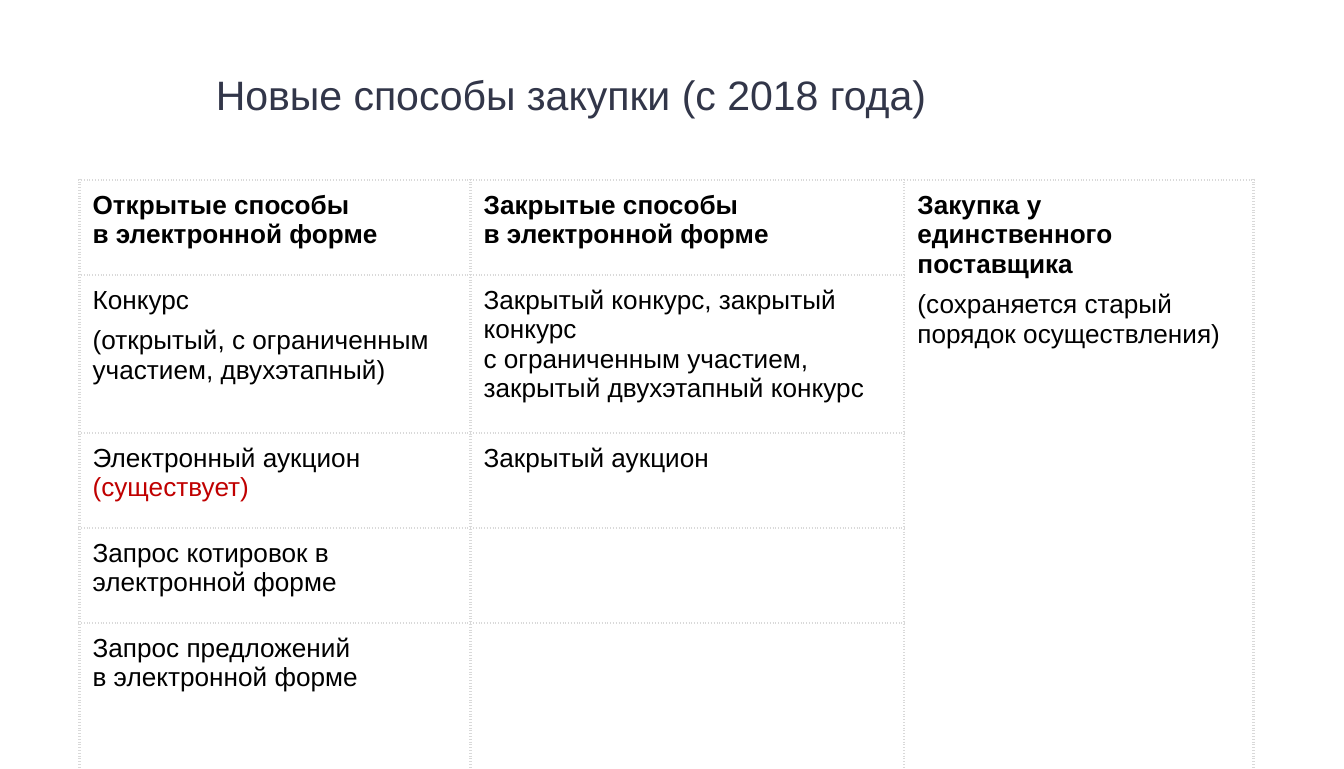
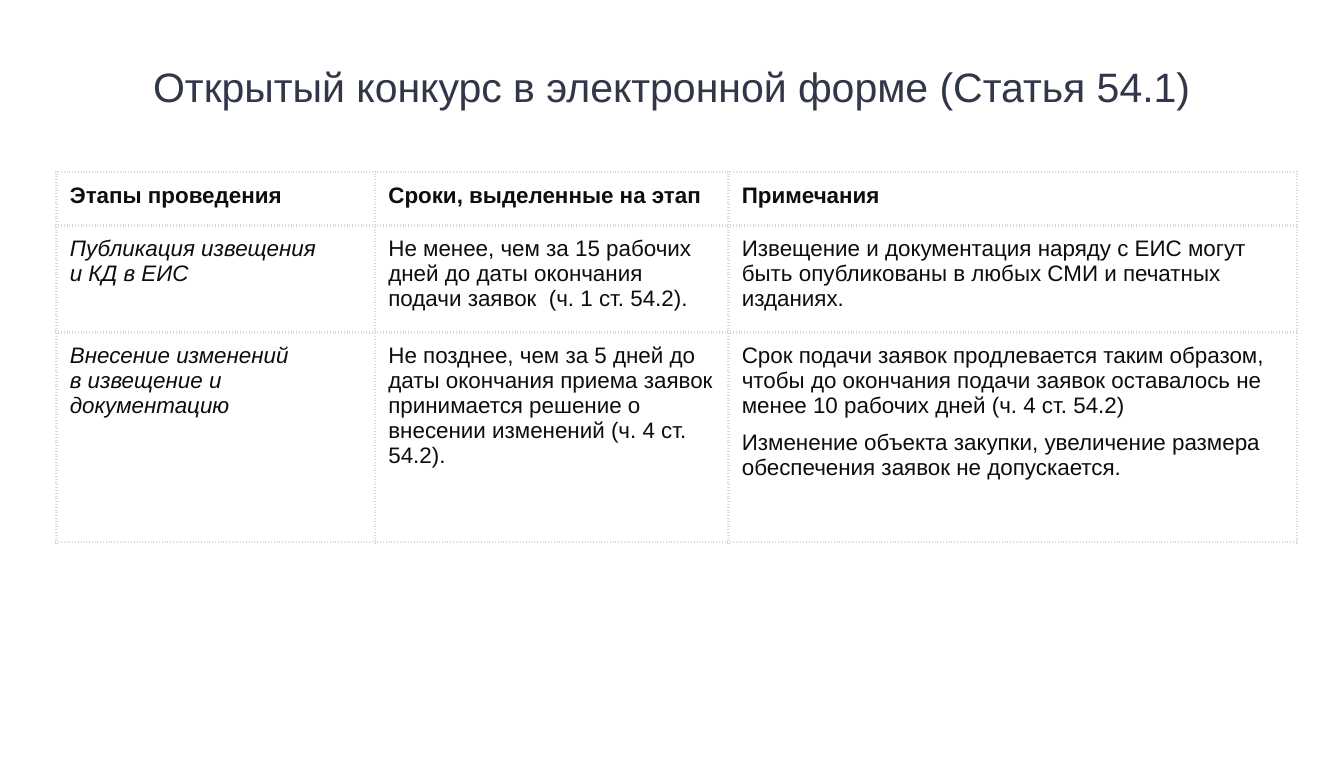
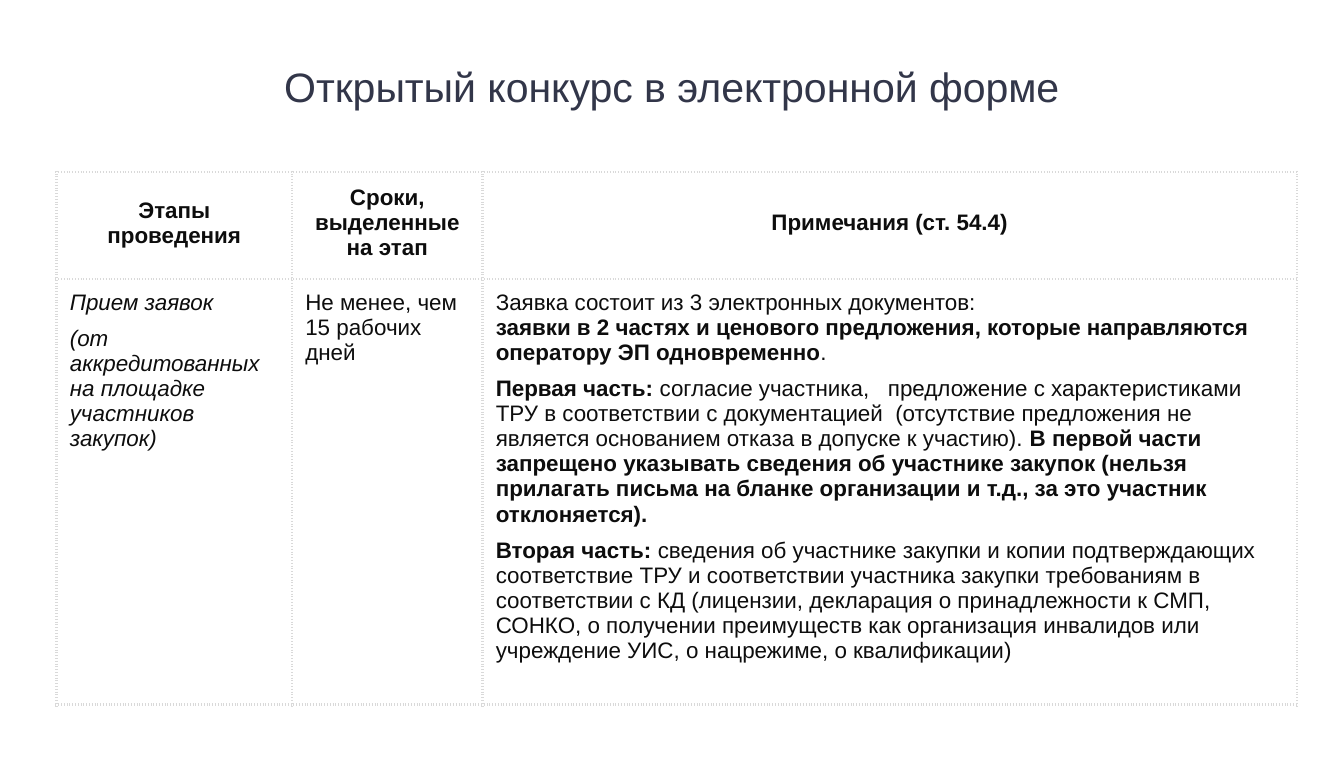
from lxml import etree
from pptx import Presentation
from pptx.dml.color import RGBColor
from pptx.enum.text import MSO_ANCHOR, PP_ALIGN
from pptx.oxml.ns import qn
from pptx.util import Cm, Pt

FONT = "Arial"
TITLE_COLOR = RGBColor(0x32, 0x36, 0x49)
BLACK = RGBColor(0x00, 0x00, 0x00)
INK = RGBColor(0x0D, 0x0D, 0x0D)
RED = RGBColor(0xC0, 0x00, 0x00)
BORDER = RGBColor(0xD9, 0xD9, 0xD9)

LEFT, CENTER = PP_ALIGN.LEFT, PP_ALIGN.CENTER
TOP, MIDDLE = MSO_ANCHOR.TOP, MSO_ANCHOR.MIDDLE

BOLD = {"bold": True}
ITALIC = {"italic": True}


class SlideBuilder:
    """Holds the shared style and the slide being filled."""

    def __init__(self):
        self.deck = Presentation()
        self.deck.slide_width, self.deck.slide_height = Cm(25.4), Cm(14.53)
        self.page = None

    def new_page(self):
        self.page = self.deck.slides.add_slide(self.deck.slide_layouts[6])

    def title(self, text, top=0.71, width=22.86, height=1.83):
        box = self.page.shapes.add_textbox(Cm(1.27), Cm(top), Cm(width), Cm(height))
        box.text_frame.word_wrap = True
        box.text_frame.vertical_anchor = MIDDLE
        para = box.text_frame.paragraphs[0]
        para.alignment = CENTER
        self.spans(para, text, size=22, color=TITLE_COLOR)

    def spans(self, para, text, size, color, bold=False, italic=False):
        """Add text as runs, with a line break at each newline."""
        for number, line in enumerate(text.split("\n")):
            if number:
                para.add_line_break()
            if line:
                span = para.add_run()
                span.text = line
                span.font.name, span.font.size = FONT, Pt(size)
                span.font.bold, span.font.italic = bold, italic
                span.font.color.rgb = color

    def borders(self, cell):
        properties = cell._tc.get_or_add_tcPr()
        for index, side in enumerate(("lnL", "lnR", "lnT", "lnB")):
            line = etree.Element(qn(f"a:{side}"), w=str(Pt(1.5)))
            fill = etree.SubElement(line, qn("a:solidFill"))
            etree.SubElement(fill, qn("a:srgbClr"), val=str(BORDER))
            etree.SubElement(line, qn("a:prstDash"), val="sysDot")
            properties.insert(index, line)

    def fill_cell(self, cell, paragraphs, style, align, anchor, bottom):
        """Each paragraph is a list of (text, style changes) pairs."""
        cell.margin_left = cell.margin_right = Cm(0.25)
        cell.margin_top, cell.margin_bottom = Cm(0.2), Cm(bottom)
        cell.vertical_anchor = anchor
        frame = cell.text_frame
        for number, pieces in enumerate(paragraphs):
            para = frame.add_paragraph() if number else frame.paragraphs[0]
            para.alignment = align
            para.space_after = Pt(6)
            for text, changes in pieces:
                self.spans(para, text, **{**style, **changes})

    def table(self, left, top, columns, heights, rows, size=12, color=INK,
              bottom=0.3, head_align=LEFT, head_anchor=MIDDLE):
        frame = self.page.shapes.add_table(
            len(rows), len(columns), Cm(left), Cm(top),
            Cm(sum(columns)), Cm(sum(heights)))
        table = frame.table
        table.first_row = table.horz_banding = False
        for column, width in zip(table.columns, columns):
            column.width = Cm(width)
        for row, height in zip(table.rows, heights):
            row.height = Cm(height)
        for row_number, row in enumerate(rows):
            head = row_number == 0
            for column_number, paragraphs in enumerate(row):
                cell = table.cell(row_number, column_number)
                cell.fill.background()
                self.borders(cell)
                if paragraphs:
                    self.fill_cell(
                        cell, paragraphs, {"size": size, "color": color, "bold": head},
                        head_align if head else LEFT,
                        head_anchor if head else TOP, bottom)
        return table


def plain(*texts, **changes):
    """A cell whose paragraphs each have a single style."""
    return [[(text, changes)] for text in texts]


def procurement_methods(builder):
    builder.new_page()
    builder.title("Новые способы закупки (с 2018 года)", top=0.58, width=19.05, height=2.41)
    single_supplier = (plain("Закупка у единственного поставщика")
                       + plain("(сохраняется старый порядок осуществления)", bold=False))
    rows = [
        [plain("Открытые способы \nв электронной форме"),
         plain("Закрытые способы \nв электронной форме"),
         single_supplier],
        [plain("Конкурс", "(открытый, с ограниченным участием, двухэтапный)"),
         plain("Закрытый конкурс, закрытый конкурс \n"
               "с ограниченным участием, закрытый двухэтапный конкурс"), None],
        [[[("Электронный аукцион ", {}), ("(существует)", {"color": RED})]],
         plain("Закрытый аукцион"), None],
        [plain("Запрос котировок в электронной форме"), None, None],
        [plain("Запрос предложений \nв электронной форме"), None, None],
    ]
    table = builder.table(1.5, 3.4, [7.39, 8.2, 6.6], [1.63, 2.34, 1.37, 1.63, 1.63],
                          rows, size=14, color=BLACK, bottom=0.41, head_anchor=TOP)
    # The single-supplier column is one tall cell
    table.cell(0, 2).merge(table.cell(4, 2))


def notice_stages(builder):
    builder.new_page()
    builder.title("Открытый конкурс в электронной форме (Статья 54.1)")
    rows = [
        [plain("Этапы проведения"), plain("Сроки, выделенные на этап"), plain("Примечания")],
        [plain("Публикация извещения \nи КД в ЕИС", **ITALIC),
         plain("Не менее, чем за 15 рабочих дней до даты окончания "
               "подачи заявок  (ч. 1 ст. 54.2)."),
         plain("Извещение и документация наряду с ЕИС могут быть "
               "опубликованы в любых СМИ и печатных изданиях.")],
        [plain("Внесение изменений\nв извещение и документацию", **ITALIC),
         plain("Не позднее, чем за 5 дней до даты окончания приема заявок "
               "принимается решение о внесении изменений (ч. 4 ст. 54.2)."),
         plain("Срок подачи заявок продлевается таким образом, чтобы до окончания "
               "подачи заявок оставалось не менее 10 рабочих дней (ч. 4 ст. 54.2)",
               "Изменение объекта закупки, увеличение размера обеспечения "
               "заявок не допускается.")],
    ]
    builder.table(1.07, 3.25, [6.02, 6.68, 10.74], [0.97, 1.9, 3.96], rows)


def application_stage(builder):
    builder.new_page()
    builder.title("Открытый конкурс в электронной форме")
    notes = [
        [("Заявка состоит из 3 электронных документов: \n", {}),
         ("заявки в 2 частях и ценового предложения, которые направляются "
          "оператору ЭП одновременно", BOLD),
         (".", {})],
        [("Первая часть: ", BOLD),
         ("согласие участника,   предложение с характеристиками ТРУ в соответствии "
          "с документацией  (отсутствие предложения не является основанием отказа "
          "в допуске к участию). ", {}),
         ("В первой части запрещено указывать сведения об участнике закупок "
          "(нельзя прилагать письма на бланке организации и т.д., "
          "за это участник отклоняется).", BOLD)],
        [("Вторая часть: ", BOLD),
         ("сведения об участнике закупки и копии подтверждающих соответствие ТРУ "
          "и соответствии участника закупки требованиям в соответствии с КД "
          "(лицензии, декларация о принадлежности к СМП, СОНКО, о получении "
          "преимуществ как организация инвалидов или учреждение УИС, "
          "о нацрежиме, о квалификации)", {})],
    ]
    rows = [
        [plain("Этапы проведения"), plain("Сроки, выделенные на этап"),
         plain("Примечания (ст. 54.4)")],
        [plain("Прием заявок", "(от аккредитованных на площадке участников закупок)",
               **ITALIC),
         plain("Не менее, чем 15 рабочих дней"), notes],
    ]
    builder.table(1.07, 3.25, [4.45, 3.6, 15.39], [1.9, 8.03], rows, head_align=CENTER)


def main():
    builder = SlideBuilder()
    procurement_methods(builder)
    notice_stages(builder)
    application_stage(builder)
    builder.deck.save("out.pptx")


if __name__ == "__main__":
    main()
